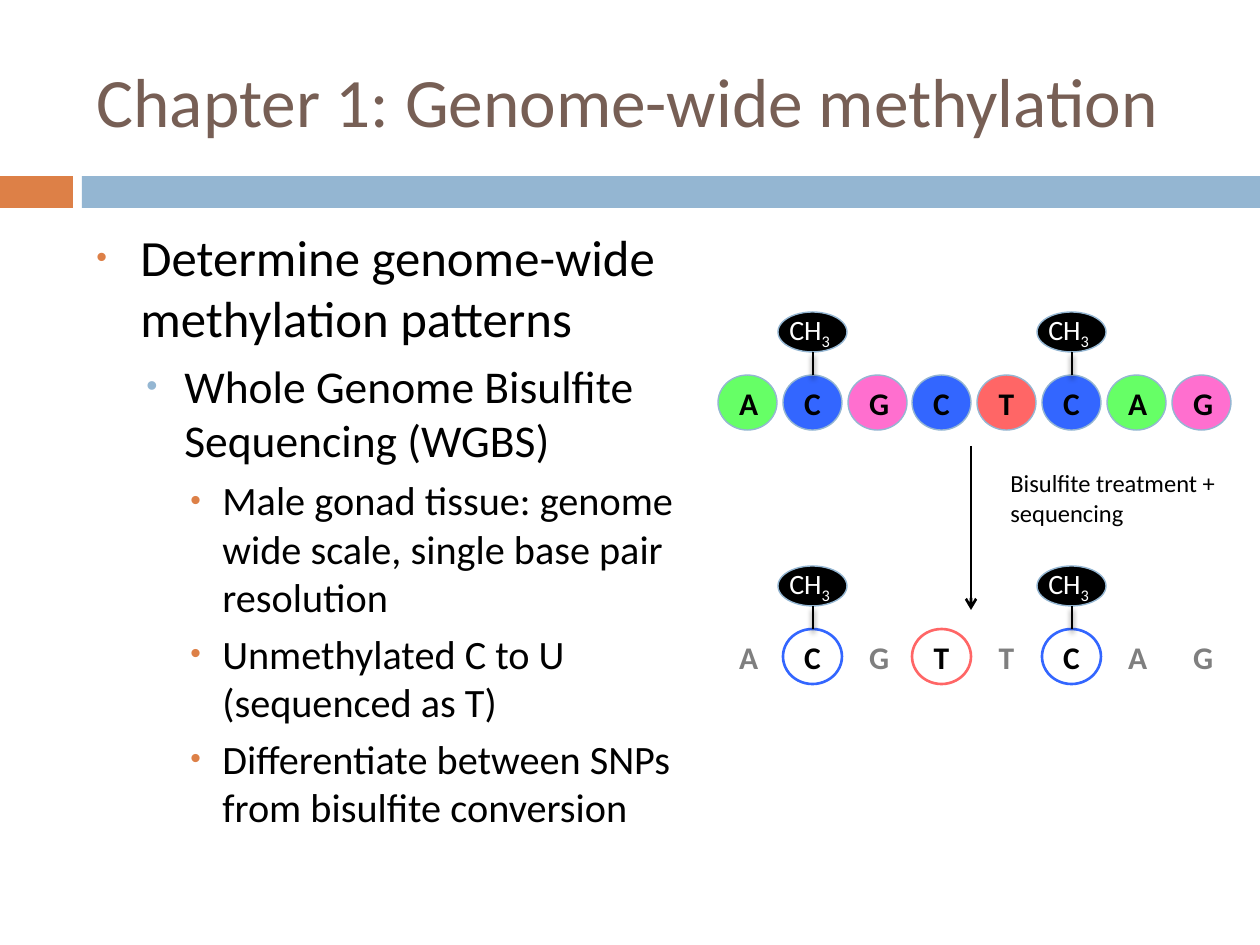
from dataclasses import dataclass
from lxml.etree import SubElement
from pptx import Presentation
from pptx.dml.color import RGBColor
from pptx.enum.shapes import MSO_CONNECTOR, MSO_SHAPE
from pptx.enum.text import MSO_ANCHOR, PP_ALIGN
from pptx.oxml.ns import qn
from pptx.util import Pt


@dataclass(frozen=True)
class Theme:
    font: str = "Calibri"
    black: str = "000000"
    white: str = "FFFFFF"
    brown: str = "775F55"
    orange: str = "DD8047"
    sky: str = "94B6D2"
    gray: str = "7F7F7F"
    green: str = "66FF66"
    blue: str = "3366FF"
    pink: str = "FF6FCF"
    red: str = "FF6666"
    title: float = 39.6
    levels: tuple = (29, 26, 23)
    base: int = 18
    methyl: int = 16
    caption: int = 14
    outline: float = 0.79
    stroke: float = 1.5


theme = Theme()
PX = 914400 / 126


def scale(*lengths):
    return [round(length * PX) for length in lengths]


def write(para, text, size, color, bold=False):
    span = para.add_run()
    span.text = text
    values = {"name": theme.font, "size": Pt(size), "bold": bold}
    for name, value in values.items():
        setattr(span.font, name, value)
    span.font.color.rgb = RGBColor.from_string(color)
    return span


deck = Presentation()
deck.slide_width, deck.slide_height = scale(1260, 945)
page = deck.slides.add_slide(deck.slide_layouts[5])

title = page.shapes.title
for name, value in zip(("left", "top", "width", "height"), scale(84, 32, 1124, 136)):
    setattr(title, name, value)
title.text_frame.vertical_anchor = MSO_ANCHOR.MIDDLE
para = title.text_frame.paragraphs[0]
para.alignment = PP_ALIGN.LEFT
write(para, "Chapter 1: Genome-wide methylation", theme.title, theme.brown)

body = page.shapes.add_textbox(*scale(84, 220, 645, 660))
body.text_frame.word_wrap = True
level_formats = [
    {"margin": 44, "indent": -44, "before": 7, "color": theme.orange, "percent": 60},
    {"margin": 88, "indent": -38, "before": 5.5, "color": theme.sky, "percent": 70},
    {"margin": 126, "indent": -32, "before": 5, "color": theme.orange, "percent": 75},
]
points = [
    (0, "Determine genome-wide methylation patterns"),
    (1, "Whole Genome Bisulfite Sequencing (WGBS)"),
    (2, "Male gonad tissue: genome wide scale, single base pair resolution"),
    (2, "Unmethylated C to U (sequenced as T)"),
    (2, "Differentiate between SNPs from bisulfite conversion"),
]
for index, (level, text) in enumerate(points):
    look = level_formats[level]
    para = body.text_frame.add_paragraph() if index else body.text_frame.paragraphs[0]
    para.level = level
    margin, indent = scale(look["margin"], look["indent"])
    properties = para._p.get_or_add_pPr()
    properties.set("marL", str(margin))
    properties.set("indent", str(indent))
    bullet_color = SubElement(properties, qn("a:buClr"))
    SubElement(bullet_color, qn("a:srgbClr"), val=look["color"])
    SubElement(properties, qn("a:buSzPct"), val=str(look["percent"] * 1000))
    SubElement(properties, qn("a:buFont"), typeface="Arial")
    SubElement(properties, qn("a:buChar"), char="•")
    if index:
        para.space_before = Pt(look["before"])
    write(para, text, theme.levels[level], theme.black)

shapes = [
    (MSO_SHAPE.RECTANGLE, (0, 176, 73, 32), theme.orange, None, 0, "", theme.black),
    (MSO_SHAPE.RECTANGLE, (82, 176, 1178, 32), theme.sky, None, 0, "", theme.black),
]
labels = [((998, 462, 263, 72), "Bisulfite treatment + sequencing", "", theme.caption, theme.black)]
lines = [((971, 446, 971, 610), True)]

base_colors = {"A": theme.green, "C": theme.blue, "G": theme.pink, "T": theme.red}
columns = [round(718 + 64.8 * index) for index in range(8)]
before_top, after_top = 375, 629
ringed = {1, 3, 5}
methylated = (1, 5)

for left, letter in zip(columns, "ACGCTCAG"):
    shapes.append((MSO_SHAPE.OVAL, (left, before_top, 59, 55), base_colors[letter],
                   theme.sky, theme.outline, letter, theme.black))
for index, (left, letter) in enumerate(zip(columns, "ACGTTCAG")):
    ring, ink = (base_colors[letter], theme.black) if index in ringed else (None, theme.gray)
    shapes.append((MSO_SHAPE.OVAL, (left, after_top, 59, 55), None, ring, theme.stroke, letter, ink))
for top in (before_top, after_top):
    for index in methylated:
        left = columns[index] - 5
        shapes.append((MSO_SHAPE.OVAL, (left, top - 63, 69, 40), theme.black,
                       theme.sky, theme.outline, "", theme.white))
        labels.append(((left - 1, top - 69, 95, 46), "CH", "3", theme.methyl, theme.white))
        lines.append(((left + 35, top - 23, left + 35, top), False))

for kind, frame, fill, outline, weight, letter, ink in shapes:
    shape = page.shapes.add_shape(kind, *scale(*frame))
    shape.shadow.inherit = False
    if fill:
        shape.fill.solid()
        shape.fill.fore_color.rgb = RGBColor.from_string(fill)
    else:
        shape.fill.background()
    if outline:
        shape.line.color.rgb = RGBColor.from_string(outline)
        shape.line.width = Pt(weight)
    else:
        shape.line.fill.background()
    if letter:
        shape.text_frame.vertical_anchor = MSO_ANCHOR.MIDDLE
        para = shape.text_frame.paragraphs[0]
        para.alignment = PP_ALIGN.CENTER
        write(para, letter, theme.base, ink, bold=True)

for frame, text, subscript, size, color in labels:
    box = page.shapes.add_textbox(*scale(*frame))
    box.text_frame.word_wrap = True
    para = box.text_frame.paragraphs[0]
    write(para, text, size, color)
    if subscript:
        span = write(para, subscript, size, color)
        span.font._element.set("baseline", "-25000")

for ends, is_arrow in lines:
    line = page.shapes.add_connector(MSO_CONNECTOR.STRAIGHT, *scale(*ends))
    line.line.color.rgb = RGBColor.from_string(theme.black)
    line.line.width = Pt(theme.stroke)
    effects = SubElement(line._element.spPr, qn("a:effectLst"))
    if is_arrow:
        SubElement(line.line._get_or_add_ln(), qn("a:tailEnd"), type="arrow")
    else:
        shadow = SubElement(effects, qn("a:outerShdw"), blurRad=str(Pt(3)), dist=str(Pt(2.4)),
                            dir="5400000", rotWithShape="0")
        shadow_color = SubElement(shadow, qn("a:srgbClr"), val=theme.black)
        SubElement(shadow_color, qn("a:alpha"), val="45000")

deck.save("out.pptx")
